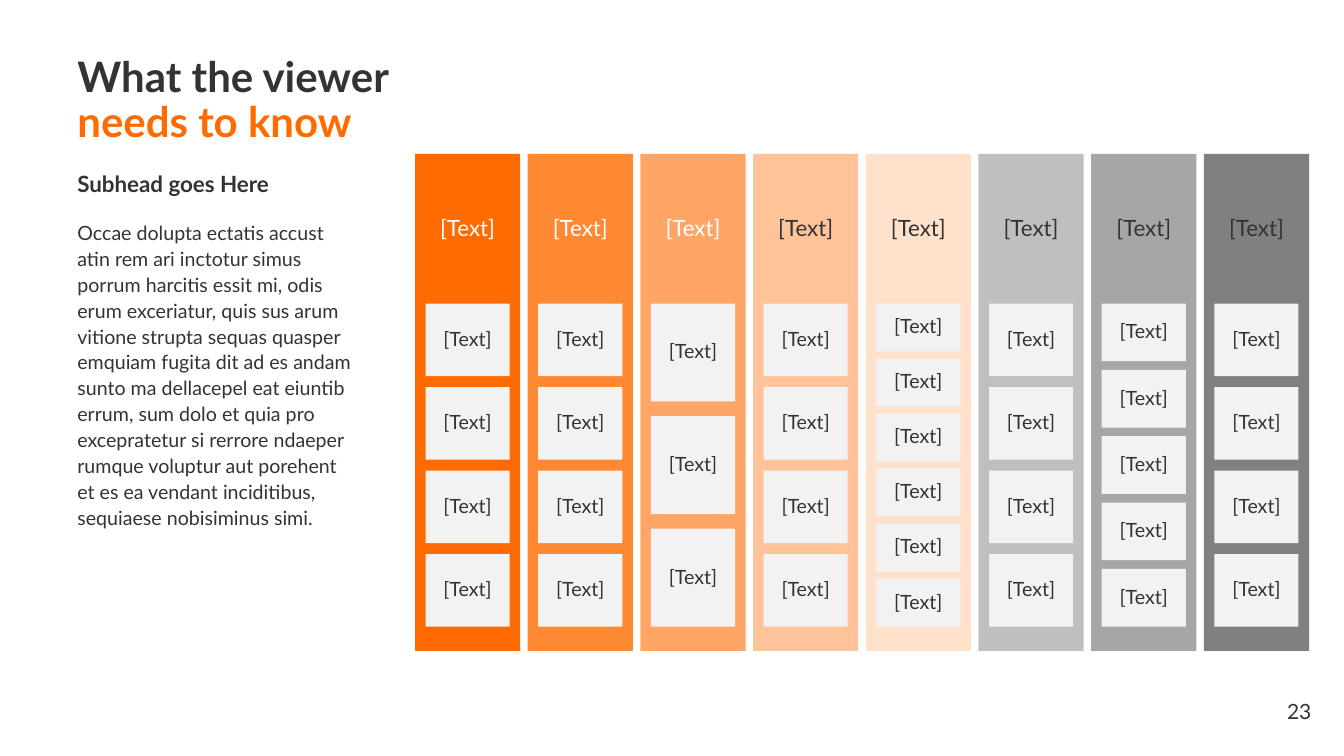
from pptx import Presentation
from pptx.dml.color import RGBColor
from pptx.enum.shapes import MSO_SHAPE as SHAPE
from pptx.enum.text import MSO_ANCHOR as ANCHOR, MSO_AUTO_SIZE as AUTO, PP_ALIGN as ALIGN
from pptx.util import Cm, Pt

DARK, WHITE, ORANGE, PALE = "333333", "FFFFFF", "FF6B00", "F2F2F2"


def write(sp, text, size=14, color=DARK, bold=False, align=ALIGN.LEFT,
          anchor=ANCHOR.TOP, spacing=0.9, inset=(0.25, 0.13), accent=""):
    """Fill a shape with one paragraph; accent is a closing run in orange."""
    tf = sp.text_frame
    tf.word_wrap, tf.auto_size, tf.vertical_anchor = True, AUTO.NONE, anchor
    tf.margin_left = tf.margin_right = Cm(inset[0])
    tf.margin_top = tf.margin_bottom = Cm(inset[1])
    p = tf.paragraphs[0]
    p.alignment, p.line_spacing, p.space_before = align, spacing, Pt(0)
    for part, tint in ((text, color), (accent, ORANGE)):
        if part:
            r = p.add_run()
            r.text = part
            r.font.name, r.font.size, r.font.bold = "Lato", Pt(size), bold
            r.font.color.rgb = RGBColor.from_string(tint)


def add_rect(left, top, width, height, fill):
    sp = s.shapes.add_shape(SHAPE.RECTANGLE, Cm(left), Cm(top), Cm(width), Cm(height))
    sp.shadow.inherit = False
    sp.fill.solid()
    sp.fill.fore_color.rgb = RGBColor.from_string(fill)
    sp.line.fill.background()
    return sp


prs = Presentation()
prs.slide_width, prs.slide_height = Cm(33.87), Cm(19.05)
s = prs.slides.add_slide(prs.slide_layouts[5])

# Title
title = s.shapes.title
title.left, title.top, title.width, title.height = Cm(1.7), Cm(1.42), Cm(10.13), Cm(2.26)
write(title, "What the viewer ", size=30, bold=True, anchor=ANCHOR.MIDDLE,
      accent="needs to know")

# Subhead, body text and page number
body = ("Occae dolupta ectatis accust atin rem ari inctotur simus porrum harcitis "
        "essit mi, odis erum exceriatur, quis sus arum vitione strupta sequas quasper "
        "emquiam fugita dit ad es andam sunto ma dellacepel eat eiuntib errum, sum dolo "
        "et quia pro excepratetur si rerrore ndaeper rumque voluptur aut porehent et es "
        "ea vendant inciditibus, sequiaese nobisiminus simi.")
for left, top, width, height, text, fmt in (
    (1.7, 4.24, 10.13, 1.07, "Subhead goes Here", dict(size=16, bold=True)),
    (1.7, 5.38, 7.47, 10.36, body, dict(spacing=1.1)),
    (31.04, 17.48, 2.26, 0.89, "23", dict(size=15, align=ALIGN.RIGHT, spacing=1.0)),
):
    write(s.shapes.add_textbox(Cm(left), Cm(top), Cm(width), Cm(height)), text, **fmt)

# Columns: fill, heading colour, number of boxes
columns = [
    (ORANGE, WHITE, 4), ("FF8833", WHITE, 4), ("FFA666", WHITE, 3), ("FFC399", DARK, 4),
    ("FFE1CC", DARK, 6), ("BFBFBF", DARK, 4), ("A6A6A6", DARK, 5), ("808080", DARK, 4),
]
LEFT, TOP, PITCH, COL_W, COL_H = 10.46, 3.88, 2.84, 2.65, 12.52
HEAD_H, STACK_H, GAP = 3.77, 8.14, 0.15  # gap is a share of the box height
centred = dict(align=ALIGN.CENTER, anchor=ANCHOR.MIDDLE)

for i, (fill, heading_color, count) in enumerate(columns):
    x = LEFT + i * PITCH
    add_rect(x, TOP, COL_W, COL_H, fill)
    heading = s.shapes.add_textbox(Cm(x), Cm(TOP), Cm(COL_W), Cm(HEAD_H))
    write(heading, "[Text]", size=16, color=heading_color, inset=(0.18, 0.18), **centred)

    # Boxes share the stack height evenly
    box_h = STACK_H / (count + (count - 1) * GAP)
    for j in range(count):
        y = TOP + HEAD_H + j * box_h * (1 + GAP)
        box = add_rect(x + 0.1 * COL_W, y, 0.8 * COL_W, box_h, PALE)
        write(box, "[Text]", inset=(0.1, 0.08), **centred)

prs.save("out.pptx")
